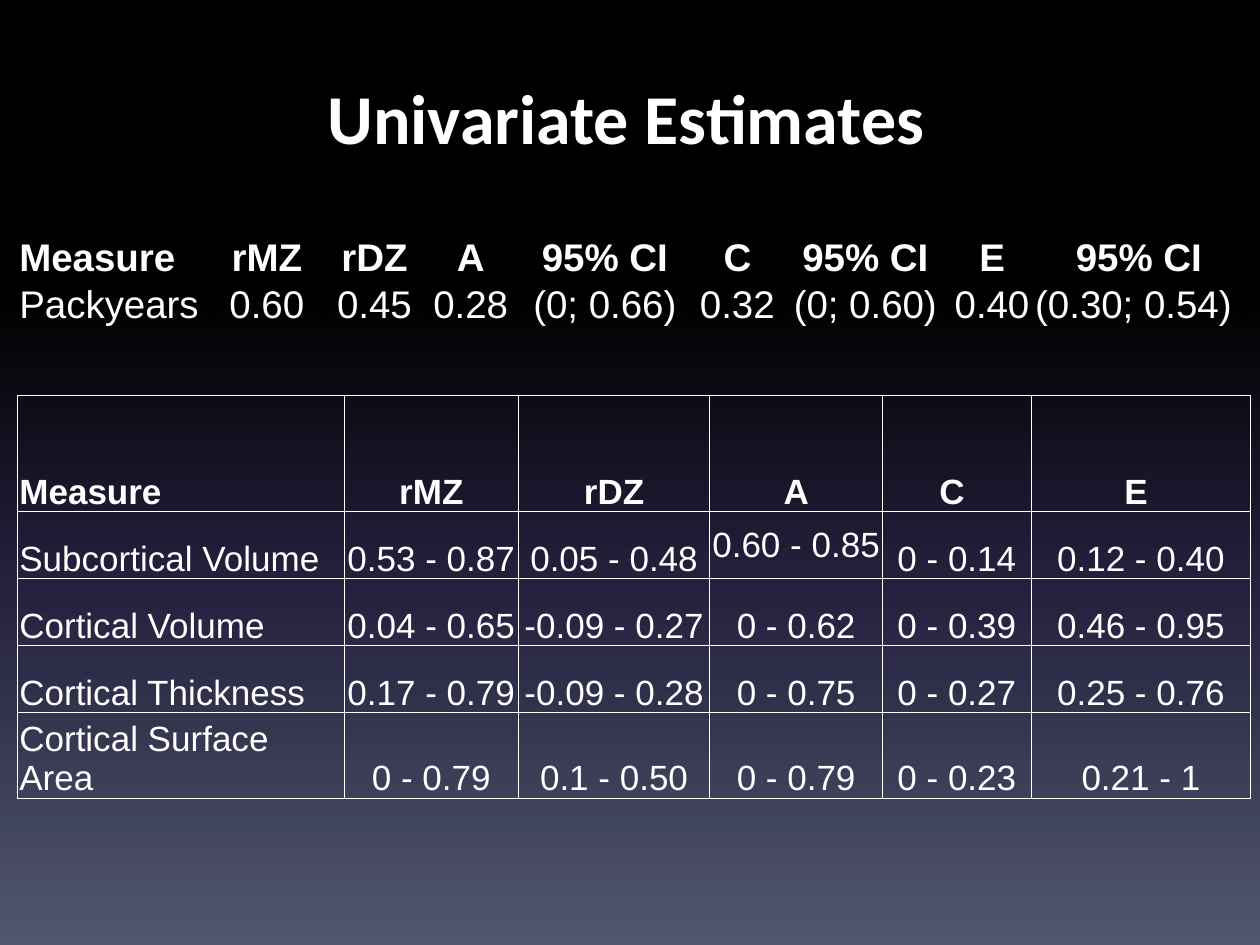
from lxml import etree
from pptx import Presentation
from pptx.dml.color import RGBColor
from pptx.enum.text import MSO_ANCHOR, PP_ALIGN
from pptx.oxml import parse_xml
from pptx.oxml.ns import nsdecls, qn
from pptx.util import Cm, Pt

LEFT, CENTER = PP_ALIGN.LEFT, PP_ALIGN.CENTER
BOTTOM, MIDDLE = MSO_ANCHOR.BOTTOM, MSO_ANCHOR.MIDDLE

TITLE = "Univariate Estimates"
WHITE, BLACK = "FFFFFF", "000000"
BACKGROUND_STOPS = [(0, BLACK), (31, BLACK), (62, "24213E"), (100, "51566D")]
TABLE_LEFT = 0.36

# Lengths in cm; cells in the exception dicts are keyed by (row, column)
PACKYEARS = {
    "top": 4.67,
    "size": 22,
    "border": BLACK,
    "widths": [3.89, 2.26, 2.08, 1.8, 3.61, 1.73, 3.43, 1.68, 4.24],
    "heights": [0.89, 0.89],
    "rows": [
        ["Measure", "rMZ", "rDZ", "A", "95% CI", "C", "95% CI", "E", "95% CI"],
        ["Packyears", "0.60", "0.45", "0.28", "(0; 0.66)", "0.32",
         "(0; 0.60)", "0.40", "(0.30; 0.54)"],
    ],
    "aligned": {(1, 8): LEFT},
    "anchored": {},
}
BRAIN_MEASURES = {
    "top": 7.98,
    "size": 20,
    "border": WHITE,
    "widths": [6.58, 3.51, 3.86, 3.48, 3.0, 4.42],
    "heights": [2.33, 1.35, 1.35, 1.35, 1.61],
    "rows": [
        ["Measure", "rMZ", "rDZ", "A", "C ", "E "],
        ["Subcortical Volume", "0.53 - 0.87", "0.05 - 0.48", "0.60 - 0.85",
         "0 - 0.14", "0.12 - 0.40"],
        ["Cortical Volume", "0.04 - 0.65", "-0.09 - 0.27", "0 - 0.62",
         "0 - 0.39", "0.46 - 0.95"],
        ["Cortical Thickness", "0.17 - 0.79", "-0.09 - 0.28", "0 - 0.75",
         "0 - 0.27", "0.25 - 0.76"],
        ["Cortical Surface Area", "0 - 0.79", "0.1 - 0.50", "0 - 0.79",
         "0 - 0.23", "0.21 - 1"],
    ],
    "aligned": {},
    "anchored": {(1, 3): MIDDLE},
}


def rgb(value):
    return RGBColor.from_string(value)


def style_text(frame, font_name, size, bold, alignment):
    paragraph = frame.paragraphs[0]
    paragraph.alignment = alignment
    font = paragraph.runs[0].font
    font.name, font.size, font.bold = font_name, Pt(size), bold
    font.color.rgb = rgb(WHITE)


def paint_background(slide):
    fill = slide.background.fill
    fill.gradient()
    fill.gradient_angle = 270
    stops = slide.background._cSld.find(".//" + qn("a:gsLst"))
    for stop in list(stops):
        stops.remove(stop)
    for percent, color in BACKGROUND_STOPS:
        stop = etree.SubElement(stops, qn("a:gs"), pos=str(percent * 1000))
        etree.SubElement(stop, qn("a:srgbClr"), val=color)


def add_borders(cell, color):
    properties = cell._tc.get_or_add_tcPr()
    for position, side in enumerate(("lnL", "lnR", "lnT", "lnB")):
        properties.insert(position, parse_xml(
            f'<a:{side} {nsdecls("a")} w="{Pt(0.5)}"><a:solidFill>'
            f'<a:srgbClr val="{color}"/></a:solidFill></a:{side}>'))


def add_estimates(slide, data):
    rows, widths, heights = data["rows"], data["widths"], data["heights"]
    table = slide.shapes.add_table(
        len(rows), len(widths), Cm(TABLE_LEFT), Cm(data["top"]),
        Cm(sum(widths)), Cm(sum(heights))).table
    table.first_row = table.horz_banding = False
    for column, width in zip(table.columns, widths):
        column.width = Cm(width)
    for row, height in zip(table.rows, heights):
        row.height = Cm(height)
    for r, values in enumerate(rows):
        for c, value in enumerate(values):
            cell = table.cell(r, c)
            cell.margin_left = cell.margin_right = cell.margin_top = Cm(0.03)
            cell.margin_bottom = 0
            cell.vertical_anchor = data["anchored"].get((r, c), BOTTOM)
            cell.fill.background()
            add_borders(cell, data["border"])
            cell.text_frame.text = value
            alignment = data["aligned"].get((r, c), CENTER if c else LEFT)
            style_text(cell.text_frame, "Arial", data["size"], r == 0, alignment)


prs = Presentation()
prs.slide_width, prs.slide_height = Cm(25.4), Cm(19.05)
slide = prs.slides.add_slide(prs.slide_layouts[6])
paint_background(slide)

# Title
title = slide.shapes.add_textbox(Cm(1.19), Cm(0.76), Cm(22.86), Cm(3.18)).text_frame
title.word_wrap = True
title.vertical_anchor = MIDDLE
title.text = TITLE
style_text(title, "Calibri", 40, True, CENTER)

# Tables of estimates
for estimates in (PACKYEARS, BRAIN_MEASURES):
    add_estimates(slide, estimates)

prs.save("out.pptx")
